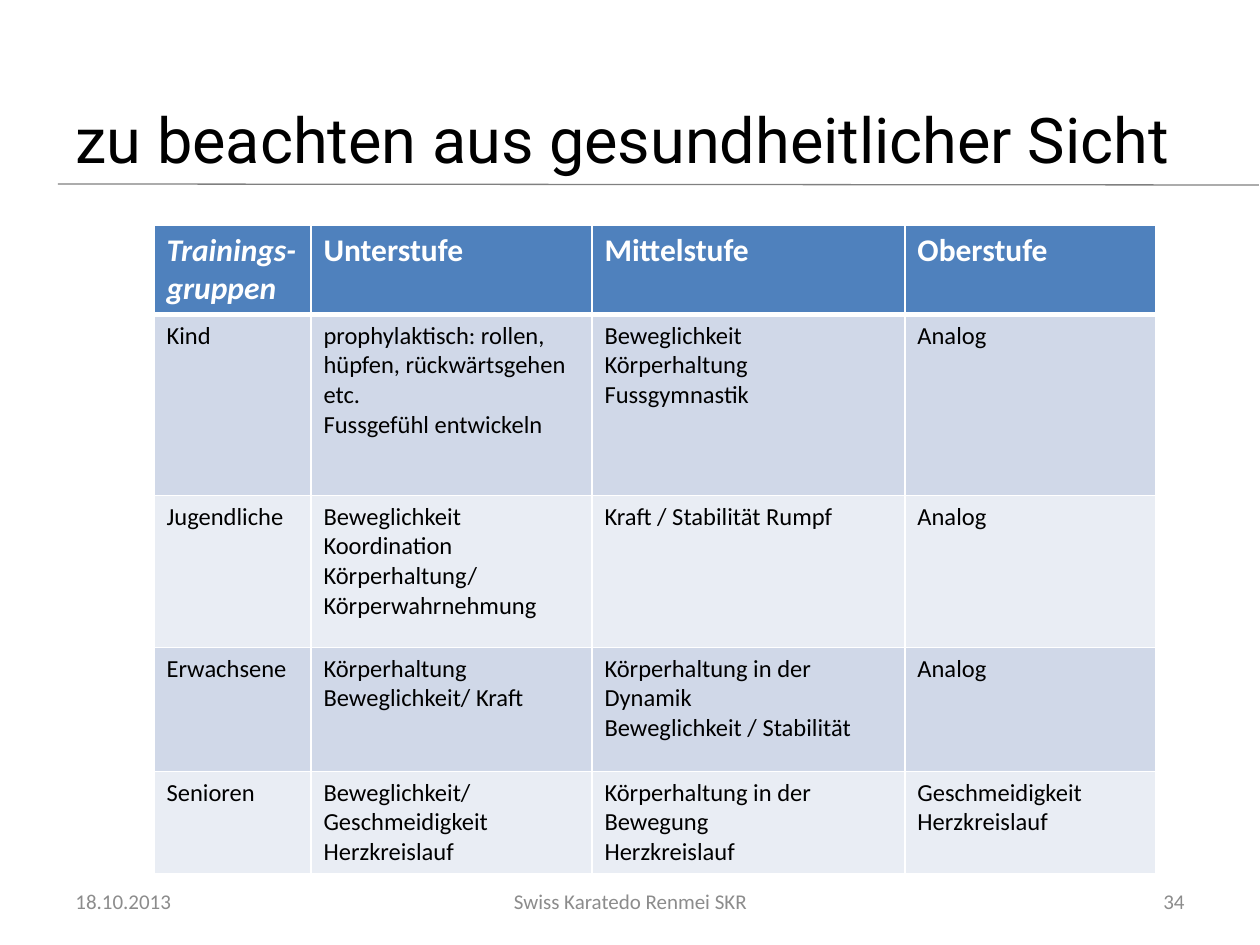
from lxml.etree import SubElement
from pptx import Presentation
from pptx.dml.color import RGBColor
from pptx.enum.shapes import MSO_CONNECTOR
from pptx.enum.text import MSO_ANCHOR, MSO_AUTO_SIZE, PP_ALIGN
from pptx.oxml.ns import qn
from pptx.util import Pt

# Content: each cell is a list of paragraphs
TITLE = "zu beachten aus gesundheitlicher Sicht"
HEADINGS = [["Trainings-gruppen"], ["Unterstufe"], ["Mittelstufe"], ["Oberstufe"]]
GROUPS = [
    [["Kind"],
     ["prophylaktisch: rollen, hüpfen, rückwärtsgehen etc.", "Fussgefühl entwickeln"],
     ["Beweglichkeit", "Körperhaltung", "Fussgymnastik"],
     ["Analog"]],
    [["Jugendliche"],
     ["Beweglichkeit Koordination", "Körperhaltung/ Körperwahrnehmung"],
     ["Kraft / Stabilität Rumpf"],
     ["Analog"]],
    [["Erwachsene"],
     ["Körperhaltung", "Beweglichkeit/ Kraft"],
     ["Körperhaltung in der Dynamik", "Beweglichkeit / Stabilität"],
     ["Analog"]],
    [["Senioren"],
     ["Beweglichkeit/ Geschmeidigkeit Herzkreislauf"],
     ["Körperhaltung in der Bewegung", "Herzkreislauf"],
     ["Geschmeidigkeit", "Herzkreislauf"]],
]
FOOTERS = [  # text, left, width, alignment
    ("18.10.2013", 63, 294, PP_ALIGN.LEFT),
    ("Swiss Karatedo Renmei SKR", 431, 399, PP_ALIGN.CENTER),
    ("34", 903, 294, PP_ALIGN.RIGHT),
]

# Lengths in px, 126 to the inch
COLUMN_WIDTHS = [157, 281, 313, 251]
ROW_HEIGHTS = [67, 181, 152, 124, 96]
HEADER_FILL = "4F81BD"
BAND_FILLS = ["D0D8E8", "E9EDF4"]


def px(length):
    return round(length * 914400 / 126)


def color(value):
    return RGBColor.from_string(value)


def write(frame, paragraphs, *, size, ink="000000", font="Calibri",
          bold=False, italic=False, align=PP_ALIGN.LEFT):
    frame.word_wrap = True
    for index, text in enumerate(paragraphs):
        paragraph = frame.paragraphs[0] if index == 0 else frame.add_paragraph()
        paragraph.alignment = align
        run = paragraph.add_run()
        run.text = text
        run.font.name, run.font.size = font, Pt(size)
        run.font.bold, run.font.italic = bold, italic
        run.font.color.rgb = color(ink)


def set_borders(cell, bottom_width):
    properties = cell._tc.get_or_add_tcPr()
    sides = [("a:lnL", 1), ("a:lnR", 1), ("a:lnT", 1), ("a:lnB", bottom_width)]
    for side, width in sides:
        border = SubElement(properties, qn(side), w=str(Pt(width)))
        SubElement(SubElement(border, qn("a:solidFill")), qn("a:srgbClr"), val="FFFFFF")


presentation = Presentation()
presentation.slide_width, presentation.slide_height = px(1260), px(945)
slide = presentation.slides.add_slide(presentation.slide_layouts[5])

# Rule under the title
rule = slide.shapes.add_connector(MSO_CONNECTOR.STRAIGHT, px(58), px(184), px(1259), px(185))
rule.line.color.rgb = color("808080")
rule.line.width = Pt(0.75)
SubElement(rule._element.spPr, qn("a:effectLst"))

# Title
title = slide.shapes.title
title.left, title.top, title.width, title.height = px(63), px(81), px(1176), px(115)
title.text_frame.auto_size = MSO_AUTO_SIZE.NONE
title.text_frame.vertical_anchor = MSO_ANCHOR.MIDDLE
write(title.text_frame, [TITLE], size=36, font="Roboto")

# Table of training groups and levels
rows = [HEADINGS] + GROUPS
table = slide.shapes.add_table(len(rows), len(HEADINGS), px(154), px(225),
                               px(sum(COLUMN_WIDTHS)), px(646)).table
for column, width in zip(table.columns, COLUMN_WIDTHS):
    column.width = px(width)
for row_index, (row, height) in enumerate(zip(rows, ROW_HEIGHTS)):
    table.rows[row_index].height = px(height)
    is_header = row_index == 0
    for column_index, paragraphs in enumerate(row):
        cell = table.cell(row_index, column_index)
        set_borders(cell, 3 if is_header else 1)
        cell.fill.solid()
        cell.fill.fore_color.rgb = color(HEADER_FILL if is_header else BAND_FILLS[(row_index - 1) % 2])
        write(cell.text_frame, paragraphs, size=18 if is_header else 14,
              ink="FFFFFF" if is_header else "000000",
              bold=is_header, italic=is_header and column_index == 0)

# Footer line
for text, left, width, align in FOOTERS:
    footer = slide.shapes.add_textbox(px(left), px(876), px(width), px(50))
    footer.text_frame.vertical_anchor = MSO_ANCHOR.MIDDLE
    write(footer.text_frame, [text], size=12, ink="8C8C8C", align=align)

presentation.save("out.pptx")
